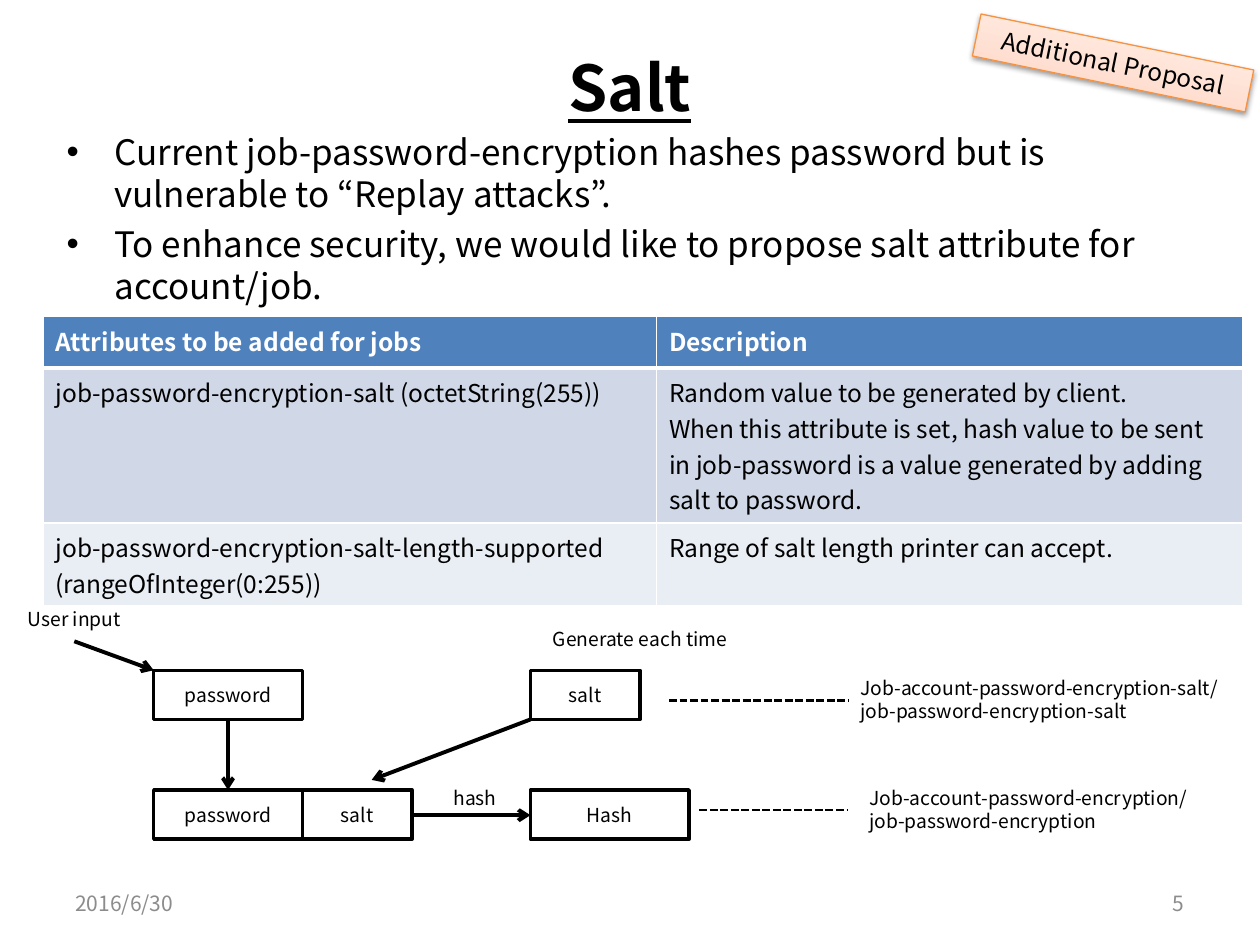
from lxml import etree
from pptx import Presentation
from pptx.dml.color import RGBColor
from pptx.enum.dml import MSO_LINE
from pptx.enum.shapes import MSO_CONNECTOR, MSO_SHAPE
from pptx.enum.text import MSO_ANCHOR, MSO_AUTO_SIZE, PP_ALIGN
from pptx.oxml import parse_xml
from pptx.oxml.ns import nsdecls, qn
from pptx.util import Inches, Pt

LEFT, CENTER, RIGHT = PP_ALIGN.LEFT, PP_ALIGN.CENTER, PP_ALIGN.RIGHT
TOP, MIDDLE = MSO_ANCHOR.TOP, MSO_ANCHOR.MIDDLE
STRAIGHT, RECTANGLE = MSO_CONNECTOR.STRAIGHT, MSO_SHAPE.RECTANGLE
FIT_SHAPE, DASHED = MSO_AUTO_SIZE.SHAPE_TO_FIT_TEXT, MSO_LINE.SQUARE_DOT
FONT = "Noto Sans CJK JP"
COLORS = {
    "black": "000000", "white": "FFFFFF", "footer": "8C8C8C",
    "header": "4F81BD", "odd_row": "D0D8E8", "even_row": "E9EDF4",
    "badge_line": "F69240", "badge_dark": "FFD2BD",
    "badge_middle": "FFDED0", "badge_light": "FFF2ED",
}

presentation = Presentation()
presentation.slide_width, presentation.slide_height = Inches(10), Inches(7.5)
slide = presentation.slides.add_slide(presentation.slide_layouts[6])
shapes = slide.shapes

# The slide is a grid of 100 columns by 75 rows.
COLUMN = presentation.slide_width / 100
ROW = presentation.slide_height / 75


def grid(*lengths):
    """Turn alternating column and row counts into lengths."""
    return [round(n * (ROW if i % 2 else COLUMN)) for i, n in enumerate(lengths)]


def write(text_frame, text, size, color="black", align=LEFT, anchor=TOP, bold=False):
    text_frame.text = text
    text_frame.word_wrap = True
    text_frame.vertical_anchor = anchor
    for paragraph in text_frame.paragraphs:
        paragraph.alignment = align
        for run in paragraph.runs:
            run.font.name = FONT
            run.font.size = Pt(size)
            run.font.bold = bold
            run.font.color.rgb = RGBColor.from_string(COLORS[color])


# Title, bullets and footer
title = shapes.add_textbox(*grid(5, 0.6, 90, 12.5))
write(title.text_frame, "Salt", 36, align=CENTER, anchor=MIDDLE, bold=True)
title.text_frame.paragraphs[0].runs[0].font.underline = True

body = shapes.add_textbox(*grid(4.3, 9.9, 92.2, 59.1))
write(body.text_frame,
      "Current job-password-encryption hashes password but is vulnerable to “Replay attacks”.\n"
      "To enhance security, we would like to propose salt attribute for account/job.", 20)
for paragraph in body.text_frame.paragraphs:
    paragraph.space_before = Pt(4)
    properties = paragraph._p.get_or_add_pPr()
    properties.set("marL", str(Inches(0.38)))
    properties.set("indent", str(Inches(-0.38)))
    etree.SubElement(properties, qn("a:buFont"), typeface="Arial")
    etree.SubElement(properties, qn("a:buChar"), char="•")

for left, text, align in [(5, "2016/6/30", LEFT), (71.7, "5", RIGHT)]:
    footer = shapes.add_textbox(*grid(left, 69.7, 23.3, 4))
    write(footer.text_frame, text, 12, "footer", align, MIDDLE)

# Attribute table
rows = [
    ("header", 4.1, "Attributes to be added for jobs", "Description"),
    ("odd_row", 12.3, "job-password-encryption-salt (octetString(255))",
     "Random value to be generated by client.\n"
     "When this attribute is set, hash value to be sent in job-password "
     "is a value generated by adding salt to password."),
    ("even_row", 6.6, "job-password-encryption-salt-length-supported (rangeOfInteger(0:255))",
     "Range of salt length printer can accept."),
]
table = shapes.add_table(len(rows), 2, *grid(3.4, 25.1, 95.2, 23)).table
for column, width in zip(table.columns, (48.7, 46.5)):
    column.width = round(width * COLUMN)
for row_index, (fill, height, *texts) in enumerate(rows):
    is_header = row_index == 0
    table.rows[row_index].height = round(height * ROW)
    for column_index, text in enumerate(texts):
        cell = table.cell(row_index, column_index)
        write(cell.text_frame, text, 14, "white" if is_header else "black", bold=is_header)
        properties = cell._tc.get_or_add_tcPr()
        for side in ("lnL", "lnR", "lnT", "lnB"):
            thick = (is_header and side == "lnB") or (row_index == 1 and side == "lnT")
            border = etree.SubElement(properties, qn(f"a:{side}"), w=str(Pt(3 if thick else 1)))
            border_fill = etree.SubElement(border, qn("a:solidFill"))
            etree.SubElement(border_fill, qn("a:srgbClr"), val=COLORS["white"])
        cell.fill.solid()
        cell.fill.fore_color.rgb = RGBColor.from_string(COLORS[fill])

# Hashing diagram: boxes in two rows
INPUT_ROW, RESULT_ROW, BOX_HEIGHT = 53.2, 62.7, 3.9
boxes = [
    ("password", 12.2, INPUT_ROW, 11.8), ("salt", 42.1, INPUT_ROW, 8.7),
    ("password", 12.2, RESULT_ROW, 11.8), ("salt", 24, RESULT_ROW, 8.7),
    ("Hash", 42.1, RESULT_ROW, 12.6),
]
for text, left, top, width in boxes:
    box = shapes.add_shape(RECTANGLE, *grid(left, top, width, BOX_HEIGHT))
    box.shadow.inherit = False
    box.fill.solid()
    box.fill.fore_color.rgb = RGBColor.from_string(COLORS["white"])
    box.line.color.rgb = RGBColor.from_string(COLORS["black"])
    box.line.width = Pt(2)
    write(box.text_frame, text, 11, align=CENTER, anchor=MIDDLE)

# Solid arrows between the steps, dashed lines to the attribute names
connectors = [
    ((5.9, 50.9, 12.2, INPUT_ROW), True),
    ((18.1, INPUT_ROW + BOX_HEIGHT, 18.1, RESULT_ROW), True),
    ((42.1, INPUT_ROW + BOX_HEIGHT, 29.5, 61.9), True),
    ((32.7, 64.7, 42.1, 64.7), True),
    ((53.1, 55.6, 67.3, 55.6), False),
    ((55.5, 64.3, 67.3, 64.3), False),
]
for ends, is_arrow in connectors:
    connector = shapes.add_connector(STRAIGHT, *grid(*ends))
    connector.line.color.rgb = RGBColor.from_string(COLORS["black"])
    connector.line.width = Pt(2.25 if is_arrow else 1.5)
    if is_arrow:
        etree.SubElement(connector.line._get_or_add_ln(), qn("a:tailEnd"), type="arrow")
    else:
        connector.line.dash_style = DASHED
    etree.SubElement(connector._element.spPr, qn("a:effectLst"))

labels = [
    ("User input", 1.2, 47.7, 9.8, 2.9),
    ("Generate each time", 42.9, 49.3, 16.8, 2.9),
    ("hash", 35, 61.9, 5.6, 2.9),
    ("Job-account-password-encryption-salt/\njob-password-encryption-salt", 67.3, 53.2, 31.5, 4.7),
    ("Job-account-password-encryption/\njob-password-encryption", 68, 61.9, 28.2, 4.7),
]
for text, *place in labels:
    label = shapes.add_textbox(*grid(*place))
    write(label.text_frame, text, 11)
    label.text_frame.word_wrap = False
    label.text_frame.auto_size = FIT_SHAPE

# Tilted badge
badge = shapes.add_shape(RECTANGLE, *grid(77.3, 3.3, 22.1, 3.4))
badge.rotation = 11.6
badge.line.color.rgb = RGBColor.from_string(COLORS["badge_line"])
badge.line.width = Pt(0.75)
write(badge.text_frame, "Additional Proposal", 14, align=CENTER)
badge.text_frame.auto_size = FIT_SHAPE
stops = "".join(
    f'<a:gs pos="{percent * 1000}"><a:srgbClr val="{COLORS[name]}"/></a:gs>'
    for percent, name in [(0, "badge_dark"), (35, "badge_middle"), (100, "badge_light")])
badge._element.spPr.find(qn("a:prstGeom")).addnext(parse_xml(
    f'<a:gradFill {nsdecls("a")} rotWithShape="1"><a:gsLst>{stops}</a:gsLst>'
    '<a:lin ang="16200000" scaled="1"/></a:gradFill>'))
badge._element.spPr.append(parse_xml(
    f'<a:effectLst {nsdecls("a")}><a:outerShdw blurRad="{Pt(3.1)}" dist="{Pt(1.6)}" '
    f'dir="5400000" rotWithShape="0"><a:srgbClr val="{COLORS["black"]}">'
    '<a:alpha val="38000"/></a:srgbClr></a:outerShdw></a:effectLst>'))

presentation.save("out.pptx")
